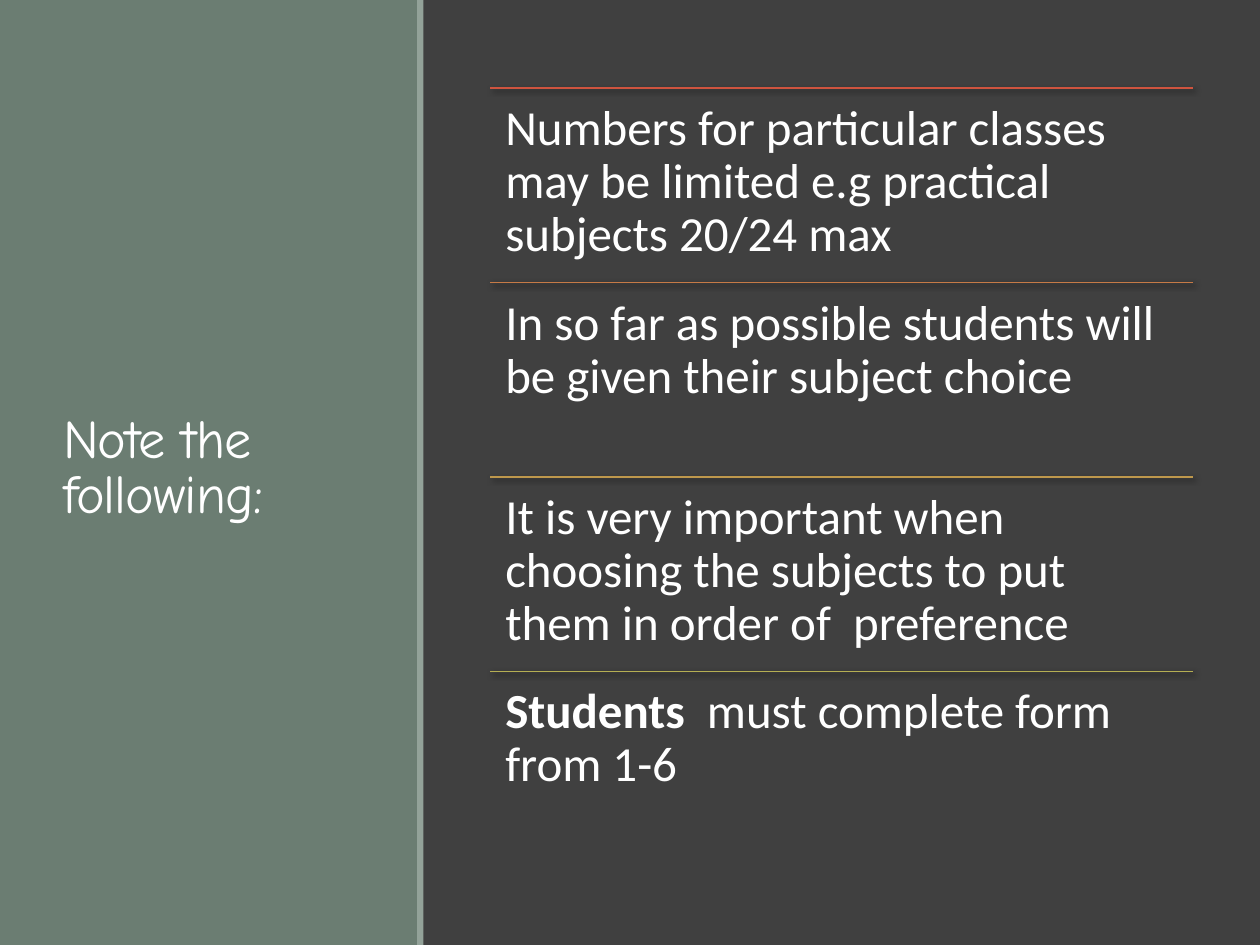
import pptx
import pptx.util
import pptx.dml.color
import pptx.enum.shapes
import pptx.enum.text
import pptx.oxml
import pptx.oxml.ns

Inches, Pt = pptx.util.Inches, pptx.util.Pt

TITLE = "Note the following:"
# Each note: rule colour, then (text, bold) spans
NOTES = [
    ("CF543F", [("Numbers for particular classes may be limited e.g practical subjects 20/24 max", False)]),
    ("C67A46", [("In so far as possible students will be given their subject choice", False)]),
    ("BE984C", [("It is very important when choosing the subjects to put them in order of  preference", False)]),
    ("B5AE53", [("Students \u00a0", True), ("must complete form from 1-6", False)]),
]
# Left, top, width, height, colour
PANELS = [
    (0, 0, 10, 7.5, "404040"),
    (0, 0, 3.32, 7.5, "6B7D72"),
    (3.31, 0, 0.05, 7.5, "93A299"),
]
NOTE_LEFT, NOTE_TOP, NOTE_WIDTH, NOTE_HEIGHT = 3.89, 0.7, 5.58, 1.543
NOTE_FRAME = {
    "word_wrap": True,
    "vertical_anchor": pptx.enum.text.MSO_ANCHOR.TOP,
    **{f"margin_{side}": Inches(0.12) for side in ("left", "top", "right", "bottom")},
}
NOTE_PARA = {"line_spacing": 0.9, "space_after": Pt(9.8)}
NOTE_FONT = {"name": "Calibri", "size": Pt(28)}
TITLE_FRAME = {"word_wrap": True, "vertical_anchor": pptx.enum.text.MSO_ANCHOR.MIDDLE}
TITLE_PARA = {"line_spacing": 0.85, "alignment": pptx.enum.text.PP_ALIGN.LEFT}
TITLE_FONT = {"name": "Comic Neue", "size": Pt(31)}
SHADOW = (
    f'<a:effectLst {pptx.oxml.ns.nsdecls("a")}>'
    f'<a:outerShdw blurRad="{Pt(3)}" dist="{Pt(2)}" dir="2700000" rotWithShape="0">'
    '<a:srgbClr val="000000"><a:alpha val="60000"/></a:srgbClr>'
    "</a:outerShdw></a:effectLst>"
)


def colour(value):
    return pptx.dml.color.RGBColor.from_string(value)


def apply(target, values):
    for name, value in values.items():
        setattr(target, name, value)


def write(frame, spans, frame_format, para_format, font_format):
    """Fill a text frame with one paragraph of white (text, bold) spans."""
    apply(frame, frame_format)
    para = frame.paragraphs[0]
    apply(para, para_format)
    for text, bold in spans:
        span = para.add_run()
        span.text = text
        apply(span.font, {**font_format, "bold": bold})
        span.font.color.rgb = colour("FFFFFF")
    return para


def add_panel(page, left, top, width, height, fill):
    panel = page.shapes.add_shape(
        pptx.enum.shapes.MSO_SHAPE.RECTANGLE,
        Inches(left), Inches(top), Inches(width), Inches(height))
    panel.shadow.inherit = False
    panel.fill.solid()
    panel.fill.fore_color.rgb = colour(fill)
    panel.line.fill.background()


def add_title(page):
    title = page.shapes.title
    apply(title, {"left": Inches(0.4), "top": Inches(0.57),
                  "width": Inches(2.53), "height": Inches(6.31)})
    para = write(title.text_frame, [(TITLE, False)], TITLE_FRAME, TITLE_PARA, TITLE_FONT)
    para.runs[0].font._element.set("spc", "-50")
    # Bring the title in front of the panels
    page.shapes._spTree.append(title._element)


def add_note(group, top, rule_colour, spans):
    left, top, width = Inches(NOTE_LEFT), Inches(top), Inches(NOTE_WIDTH)
    rule = group.shapes.add_connector(
        pptx.enum.shapes.MSO_CONNECTOR.STRAIGHT, left, top, left + width, top)
    rule.line.color.rgb = colour(rule_colour)
    rule.line.width = Pt(1)
    rule._element.spPr.append(pptx.oxml.parse_xml(SHADOW))
    box = group.shapes.add_textbox(left, top, width, Inches(NOTE_HEIGHT))
    write(box.text_frame, spans, NOTE_FRAME, NOTE_PARA, NOTE_FONT)


def main():
    deck = pptx.Presentation()
    deck.slide_width, deck.slide_height = Inches(10), Inches(7.5)
    page = deck.slides.add_slide(deck.slide_layouts[5])
    page.background.fill.solid()
    page.background.fill.fore_color.rgb = colour("404040")
    for panel in PANELS:
        add_panel(page, *panel)
    add_title(page)
    notes = page.shapes.add_group_shape()
    for index, (rule_colour, spans) in enumerate(NOTES):
        add_note(notes, NOTE_TOP + index * NOTE_HEIGHT, rule_colour, spans)
    deck.save("out.pptx")


if __name__ == "__main__":
    main()
